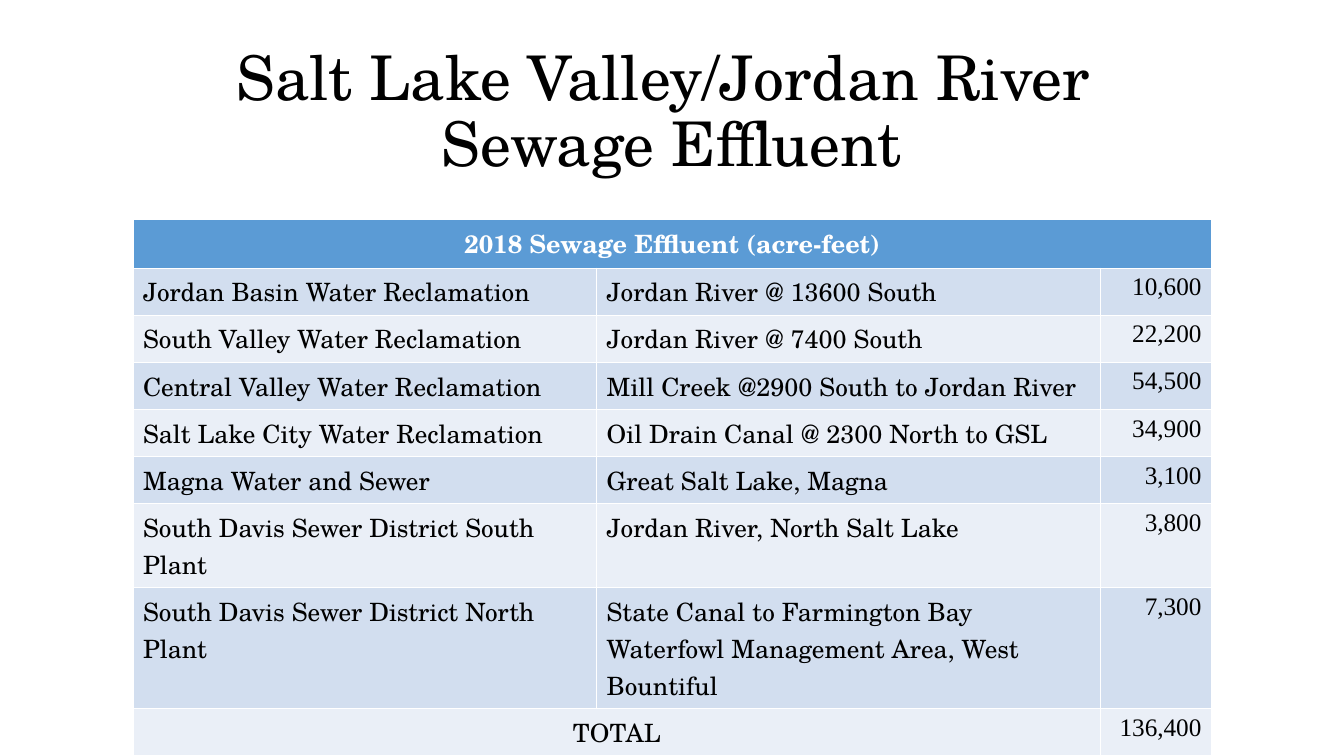
from pptx import Presentation
from pptx.dml.color import RGBColor as RGB
from pptx.enum.text import MSO_ANCHOR as Anchor, PP_ALIGN as Align
from pptx.util import Pt

# Content
TITLE = ("Salt Lake Valley/Jordan River ", "Sewage Effluent")
HEAD = "2018 Sewage Effluent (acre-feet)"
PLANTS = [
    ("Jordan Basin Water Reclamation", "Jordan River @ 13600 South", 10600),
    ("South Valley Water Reclamation", "Jordan River @ 7400 South", 22200),
    ("Central Valley Water Reclamation",
     "Mill Creek @2900 South to Jordan River", 54500),
    ("Salt Lake City Water Reclamation",
     "Oil Drain Canal @ 2300 North to GSL", 34900),
    ("Magna Water and Sewer", "Great Salt Lake, Magna", 3100),
    ("South Davis Sewer District South Plant",
     "Jordan River, North Salt Lake", 3800),
    ("South Davis Sewer District North Plant",
     "State Canal to Farmington Bay Waterfowl Management Area, "
     "West Bountiful", 7300),
]
TOTAL = sum(flow for _, _, flow in PLANTS)

THEME = {
    "font": "TeX Gyre Schola", "digits": "Times New Roman",
    "title": 44, "body": 18,
    "black": RGB(0, 0, 0), "white": RGB(255, 255, 255),
    "head": RGB(0x5B, 0x9B, 0xD5),
    "bands": (RGB(0xEA, 0xEF, 0xF7), RGB(0xD2, 0xDE, 0xEF)),
}

# Layout, in points
SLIDE = (960, 540)
TITLE_BOX = (66, 28.75, 828, 104.4)
TABLE_AT = (95, 156.5)
COLS = (331.2, 360, 79.2)
HEAD_H, ROW_H = 27.5, 29.2


def style(para, size, color, align, font=THEME["font"], bold=False):
    para.alignment = align
    para.font.name = font
    para.font.size = Pt(size)
    para.font.bold = bold
    para.font.color.rgb = color


def put(cell, text, align=Align.LEFT, color=THEME["black"], **look):
    cell.text = text
    style(cell.text_frame.paragraphs[0], THEME["body"], color, align, **look)


def add_title(slide):
    title = slide.shapes.title
    title.left, title.top, title.width, title.height = map(Pt, TITLE_BOX)
    frame = title.text_frame
    frame.word_wrap = True
    frame.vertical_anchor = Anchor.MIDDLE
    para = frame.paragraphs[0]
    para.add_run().text = TITLE[0]
    para.add_line_break()
    para.add_run().text = TITLE[1]
    para.line_spacing = 0.9
    style(para, THEME["title"], THEME["black"], Align.CENTER)


def add_flows(slide):
    count = len(PLANTS) + 2
    last = count - 1
    high = HEAD_H + ROW_H * last
    table = slide.shapes.add_table(
        count, len(COLS), *map(Pt, (*TABLE_AT, sum(COLS), high))).table

    # Sizes and band fills
    for col, wide in zip(table.columns, COLS):
        col.width = Pt(wide)
    for num, row in enumerate(table.rows):
        row.height = Pt(ROW_H if num else HEAD_H)
        for cell in row.cells:
            cell.fill.solid()
            cell.fill.fore_color.rgb = (
                THEME["bands"][num % 2] if num else THEME["head"])

    # Header and total span several columns
    table.cell(0, 0).merge(table.cell(0, 2))
    table.cell(last, 0).merge(table.cell(last, 1))
    put(table.cell(0, 0), HEAD, Align.CENTER, THEME["white"], bold=True)
    put(table.cell(last, 0), "TOTAL", Align.CENTER)

    # Plants, outlets and flows
    for num, (plant, outlet, _) in enumerate(PLANTS, 1):
        put(table.cell(num, 0), plant)
        put(table.cell(num, 1), outlet)
    flows = [flow for _, _, flow in PLANTS] + [TOTAL]
    for num, flow in enumerate(flows, 1):
        put(table.cell(num, 2), f"{flow:,}", Align.RIGHT,
            font=THEME["digits"])


def main():
    deck = Presentation()
    deck.slide_width, deck.slide_height = map(Pt, SLIDE)
    slide = deck.slides.add_slide(deck.slide_layouts[5])
    add_title(slide)
    add_flows(slide)
    deck.save("out.pptx")


if __name__ == "__main__":
    main()
